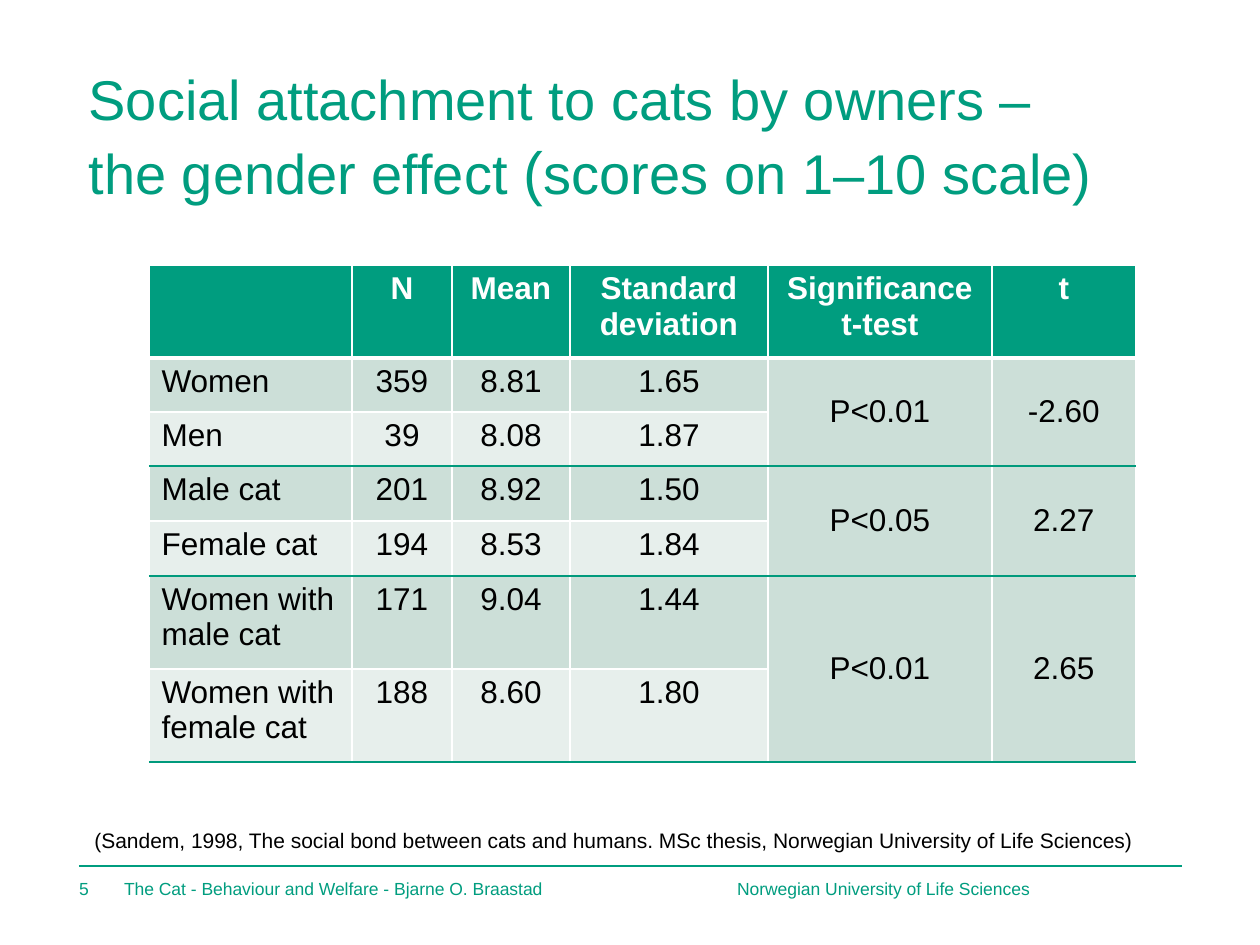
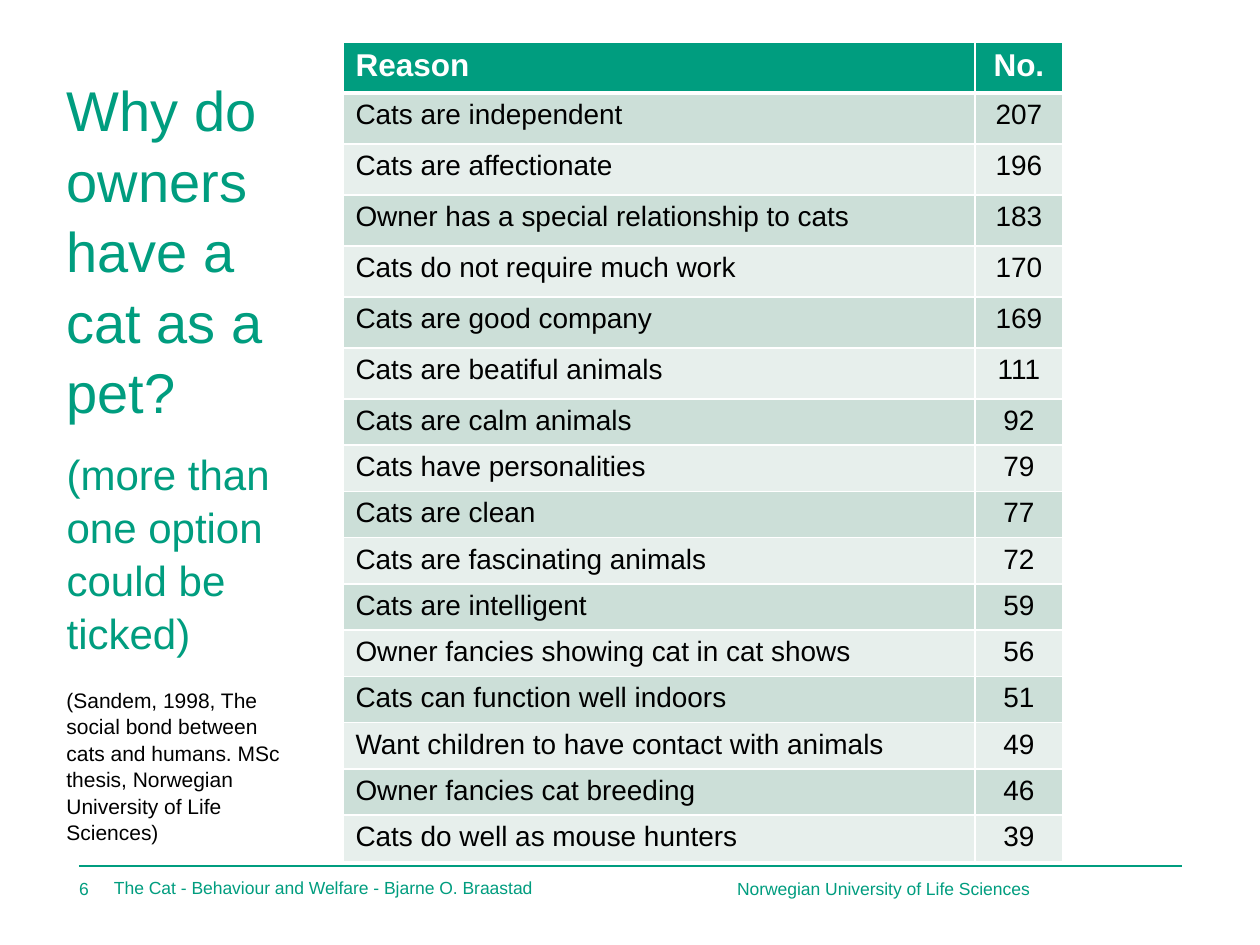
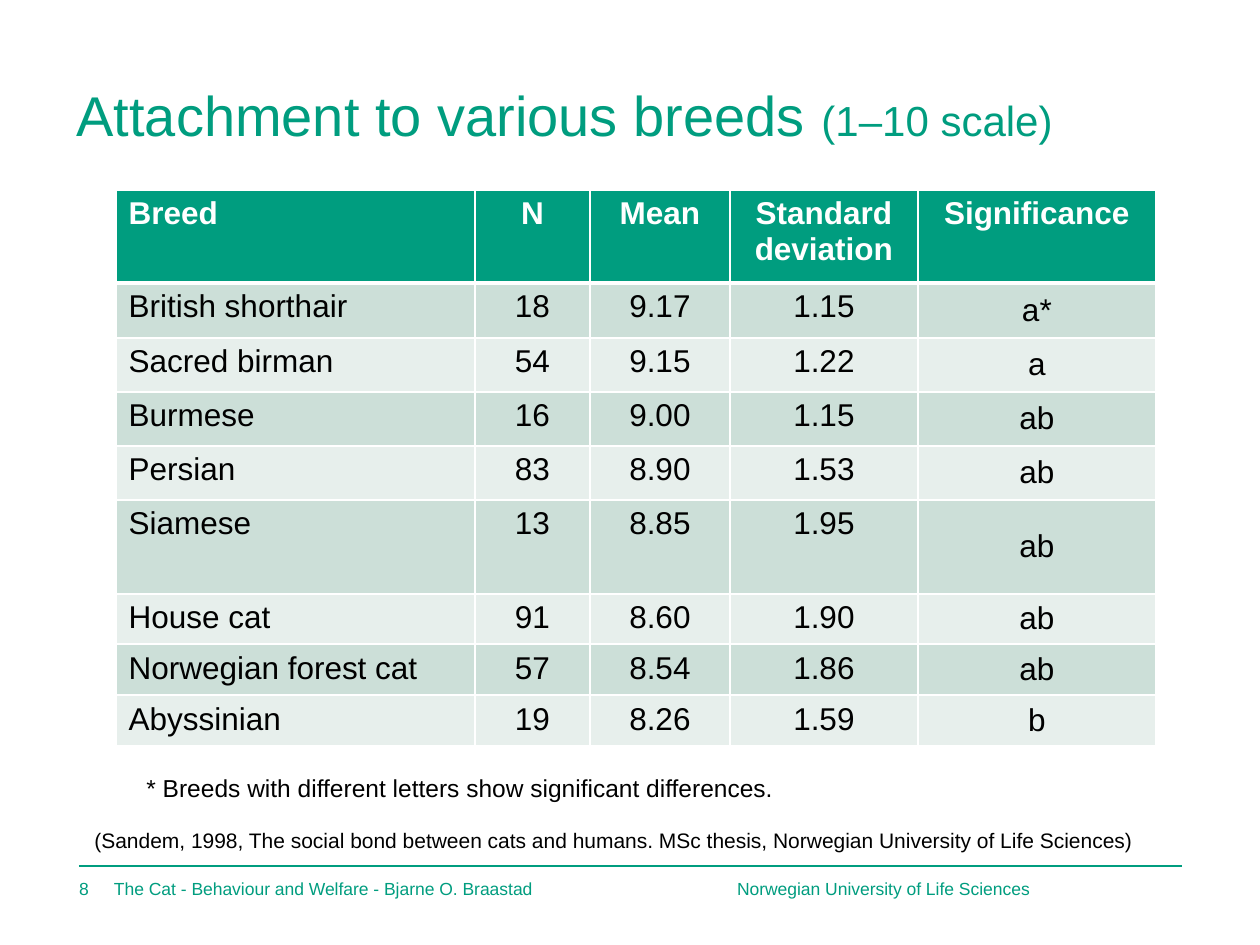
from lxml import etree
from pptx import Presentation
from pptx import util as u
from pptx.dml.color import RGBColor
from pptx.enum import shapes, text
from pptx.oxml import ns

COL = {"green": "009D7F", "rule": "009A7C", "dark": "CCDFD8",
       "light": "E7EFEC", "white": "FFFFFF", "black": "000000"}
FONT = "Arial"
LEFT, MID = text.PP_ALIGN.LEFT, text.PP_ALIGN.CENTER
CITE = ("(Sandem, 1998, The social bond between cats and humans. "
        "MSc thesis, Norwegian University of Life Sciences)")
TALK = "The Cat - Behaviour and Welfare - Bjarne O. Braastad"
SCHOOL = "Norwegian University of Life Sciences"

BONDS = [
    ["", "N", "Mean", "Standard deviation", "Significance\nt-test", "t"],
    ["Women", "359", "8.81", "1.65", "P<0.01", "-2.60"],
    ["Men", "39", "8.08", "1.87", "", ""],
    ["Male cat", "201", "8.92", "1.50", "P<0.05", "2.27"],
    ["Female cat", "194", "8.53", "1.84", "", ""],
    ["Women with male cat", "171", "9.04", "1.44", "P<0.01", "2.65"],
    ["Women with female cat", "188", "8.60", "1.80", "", ""],
]
REASONS = [
    ["Reason", "No."],
    ["Cats are independent", "207"],
    ["Cats are affectionate", "196"],
    ["Owner has a special relationship to cats", "183"],
    ["Cats do not require much work", "170"],
    ["Cats are good company", "169"],
    ["Cats are beatiful animals", "111"],
    ["Cats are calm animals", "92"],
    ["Cats have personalities", "79"],
    ["Cats are clean", "77"],
    ["Cats are fascinating animals", "72"],
    ["Cats are intelligent", "59"],
    ["Owner fancies showing cat in cat shows", "56"],
    ["Cats can function well indoors", "51"],
    ["Want children to have contact with animals", "49"],
    ["Owner fancies cat breeding", "46"],
    ["Cats do well as mouse hunters", "39"],
]
BREEDS = [
    ["Breed", "N", "Mean", "Standard deviation", "Significance"],
    ["British shorthair", "18", "9.17", "1.15", "a*"],
    ["Sacred birman", "54", "9.15", "1.22", "a"],
    ["Burmese", "16", "9.00", "1.15", "ab"],
    ["Persian", "83", "8.90", "1.53", "ab"],
    ["Siamese", "13", "8.85", "1.95", "ab"],
    ["House cat", "91", "8.60", "1.90", "ab"],
    ["Norwegian forest cat", "57", "8.54", "1.86", "ab"],
    ["Abyssinian", "19", "8.26", "1.59", "b"],
]


def px(n):
    """Turn pixels, 126 to the inch, into EMU."""
    return u.Emu(round(n * 914400 / 126))


def rgb(name):
    return RGBColor.from_string(COL[name])


def write(frame, paras, hue, align=LEFT, bold=False, space=None):
    """Fill a text frame; each paragraph is a list of (words, size) runs."""
    for i, runs in enumerate(paras):
        para = frame.paragraphs[0] if i == 0 else frame.add_paragraph()
        para.alignment = align
        if space:
            para.line_spacing = space
        for words, size in runs:
            run = para.add_run()
            run.text = words
            font = run.font
            font.name, font.size, font.bold = FONT, u.Pt(size), bold
            font.color.rgb = rgb(hue)


def title(slide, box, paras):
    shape = slide.shapes.title
    shape.left, shape.top, shape.width, shape.height = map(px, box)
    frame = shape.text_frame
    frame.word_wrap = True
    frame.auto_size = text.MSO_AUTO_SIZE.NONE
    frame.vertical_anchor = text.MSO_ANCHOR.TOP
    write(frame, paras, "green", space=1.05)
    for para in frame.paragraphs[1:]:
        para.space_before = u.Pt(12)


def note(slide, box, words, size, hue="black", foot=False):
    frame = slide.shapes.add_textbox(*map(px, box)).text_frame
    frame.word_wrap = True
    frame.auto_size = text.MSO_AUTO_SIZE.SHAPE_TO_FIT_TEXT
    if foot:
        frame.vertical_anchor = text.MSO_ANCHOR.MIDDLE
        frame.margin_left = frame.margin_right = 0
        frame.margin_top = frame.margin_bottom = 0
    write(frame, [[(words, size)]], hue, space=None if foot else 1.05)


def rule(slide, left, right, y, hue, width):
    line = slide.shapes.add_connector(
        shapes.MSO_CONNECTOR.STRAIGHT, px(left), px(y), px(right), px(y))
    line.line.color.rgb = rgb(hue)
    line.line.width = u.Pt(width)
    etree.SubElement(line._element.spPr, ns.qn("a:effectLst"))


def edge(cell, side, width):
    props = cell._tc.get_or_add_tcPr()
    line = etree.SubElement(props, ns.qn("a:ln" + side), w=str(u.Pt(width)))
    fill = etree.SubElement(line, ns.qn("a:solidFill"))
    etree.SubElement(fill, ns.qn("a:srgbClr"), val=COL["white"])


def grid(slide, left, top, cols, rows, data, size=18, center=()):
    """Add a banded table; columns in center are centred vertically."""
    table = slide.shapes.add_table(
        len(rows), len(cols), px(left), px(top),
        px(sum(cols)), px(sum(rows))).table
    table.horz_banding = False
    for col, width in zip(table.columns, cols):
        col.width = px(width)
    for row, height in zip(table.rows, rows):
        row.height = px(height)
    for r, line in enumerate(data):
        head = r == 0
        for c, words in enumerate(line):
            cell = table.cell(r, c)
            for side in "LRTB":
                thick = (r, side) in ((0, "B"), (1, "T"))
                edge(cell, side, 3 if thick else 1)
            cell.fill.solid()
            cell.fill.fore_color.rgb = rgb(
                "green" if head else "dark" if r % 2 else "light")
            if c in center and not head:
                cell.vertical_anchor = text.MSO_ANCHOR.MIDDLE
            if words:
                write(cell.text_frame,
                      [[(part, 18 if head else size)]
                       for part in words.split("\n")],
                      "white" if head else "black",
                      MID if c else LEFT, head)
    return table


def start(deck, number, left, top=878):
    """Add a slide with its footer rule and texts."""
    slide = deck.slides.add_slide(deck.slide_layouts[5])
    rule(slide, 79, 1182, 866, "green", 1)
    for x, y, wide, words in ((79, 878, 30, str(number)),
                              (left, top, 600, TALK),
                              (737, 878, 398, SCHOOL)):
        note(slide, (x, y, wide, 21), words, 10, "green", True)
    return slide


def bonds(deck):
    slide = start(deck, 5, 124)
    title(slide, (76, 55, 1040, 152), [[
        ("Social attachment to cats by owners – the gender effect ", 32),
        ("(", 34), ("scores on 1–10 scale)", 32)]])
    left, top = 149, 265
    cols = [203, 100, 118, 198, 224, 144]
    rows = [93, 54, 54, 55, 55, 93, 93]
    table = grid(slide, left, top, cols, rows, BONDS, center=(4, 5))
    # Each pair of rows shares one test and ends with a rule
    for r in (1, 3, 5):
        for c in (4, 5):
            table.cell(r, c).merge(table.cell(r + 1, c))
        rule(slide, left, left + sum(cols), top + sum(rows[:r + 2]),
             "rule", 1.5)
    note(slide, (82, 820, 1096, 38), CITE, 12)


def reasons(deck):
    slide = start(deck, 6, 114, 877)
    title(slide, (54, 66, 256, 581), [
        [("Why do owners have a cat as a pet?", 32)],
        [("(more than one option could be ticked)", 24)]])
    note(slide, (54, 680, 256, 165), CITE, 12)
    grid(slide, 343, 42, [632, 88], [51] * 7 + [46] * 10, REASONS, 16)


def breeds(deck):
    slide = start(deck, 8, 114)
    title(slide, (64, 71, 1027, 81), [[
        ("Attachment to various breeds ", 32), ("(1–10 scale)", 24)]])
    grid(slide, 116, 190, [359, 115, 140, 188, 238],
         [93, 55, 54, 54, 54, 94, 50, 51, 50], BREEDS, center=(4,))
    note(slide, (82, 820, 1096, 38), CITE, 12)
    note(slide, (134, 765, 1062, 43),
         "* Breeds with different letters show significant differences.", 14)


def main():
    deck = Presentation()
    deck.slide_width, deck.slide_height = px(1260), px(945)
    bonds(deck)
    reasons(deck)
    breeds(deck)
    deck.save("out.pptx")


if __name__ == "__main__":
    main()
